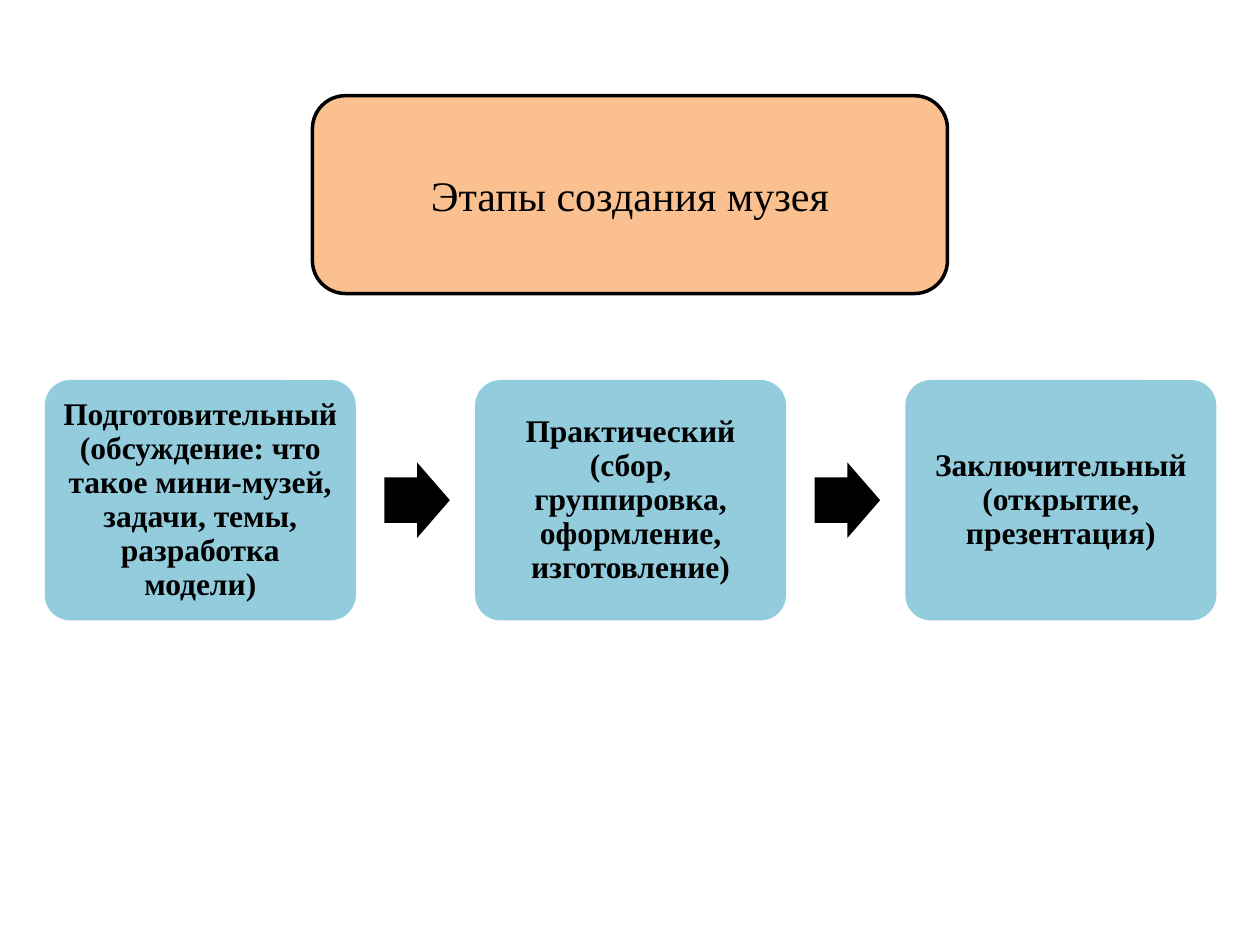
from pptx import Presentation, util as u
from pptx.dml.color import RGBColor
from pptx.enum import shapes, text

TITLE = "Этапы создания музея"
STAGES = [
    "Подготовительный (обсуждение: что такое мини-музей, задачи, темы, разработка модели)",
    "Практический (сбор, группировка, оформление, изготовление)",
    "Заключительный (открытие, презентация)",
]
THEME = {
    "font": "Times New Roman", "ink": "000000", "title": "FAC090", "stage": "93CDDD",
    "big": 24, "small": 18, "line": 2,
}
KIND = shapes.MSO_SHAPE

LEFT, TOP, WIDE, HIGH = 0.37, 3.03, 2.44, 1.88
STEP = 3.415
ARROW_GAP, ARROW_WIDE, ARROW_HIGH = 0.24, 0.52, 0.6


def draw(slide, kind, box, fill, line=None):
    shape = slide.shapes.add_shape(kind, *map(u.Inches, box))
    shape.shadow.inherit = False
    shape.fill.solid()
    shape.fill.fore_color.rgb = RGBColor.from_string(THEME[fill])
    if line:
        shape.line.color.rgb = RGBColor.from_string(THEME[line])
        shape.line.width = u.Pt(THEME["line"])
    else:
        shape.line.fill.background()
    return shape


def write(shape, words, size, bold=False):
    frame = shape.text_frame
    frame.text = words
    frame.word_wrap = True
    frame.vertical_anchor = text.MSO_ANCHOR.MIDDLE
    para = frame.paragraphs[0]
    para.alignment = text.PP_ALIGN.CENTER
    font = para.runs[0].font
    font.name, font.size, font.bold = THEME["font"], u.Pt(THEME[size]), bold
    font.color.rgb = RGBColor.from_string(THEME["ink"])
    return frame


def main():
    deck = Presentation()
    deck.slide_width, deck.slide_height = u.Inches(10), u.Inches(7.5)
    slide = deck.slides.add_slide(deck.slide_layouts[6])

    for i, words in enumerate(STAGES):
        x = LEFT + i * STEP
        card = draw(slide, KIND.ROUNDED_RECTANGLE, (x, TOP, WIDE, HIGH), "stage", "stage")
        card.adjustments[0] = 0.1
        frame = write(card, words, "small", True)
        frame.margin_left = frame.margin_right = u.Inches(0.07)
        frame.margin_top = frame.margin_bottom = u.Inches(0.07)
        frame.paragraphs[0].line_spacing = 0.9
        if i < len(STAGES) - 1:
            y = TOP + (HIGH - ARROW_HIGH) / 2
            box = (x + WIDE + ARROW_GAP, y, ARROW_WIDE, ARROW_HIGH)
            arrow = draw(slide, KIND.RIGHT_ARROW, box, "ink")
            arrow.adjustments[0] = 0.6
            arrow.adjustments[1] = 0.5

    head = draw(slide, KIND.ROUNDED_RECTANGLE, (2.48, 0.76, 5.04, 1.57), "title", "ink")
    write(head, TITLE, "big")
    deck.save("out.pptx")


if __name__ == "__main__":
    main()
